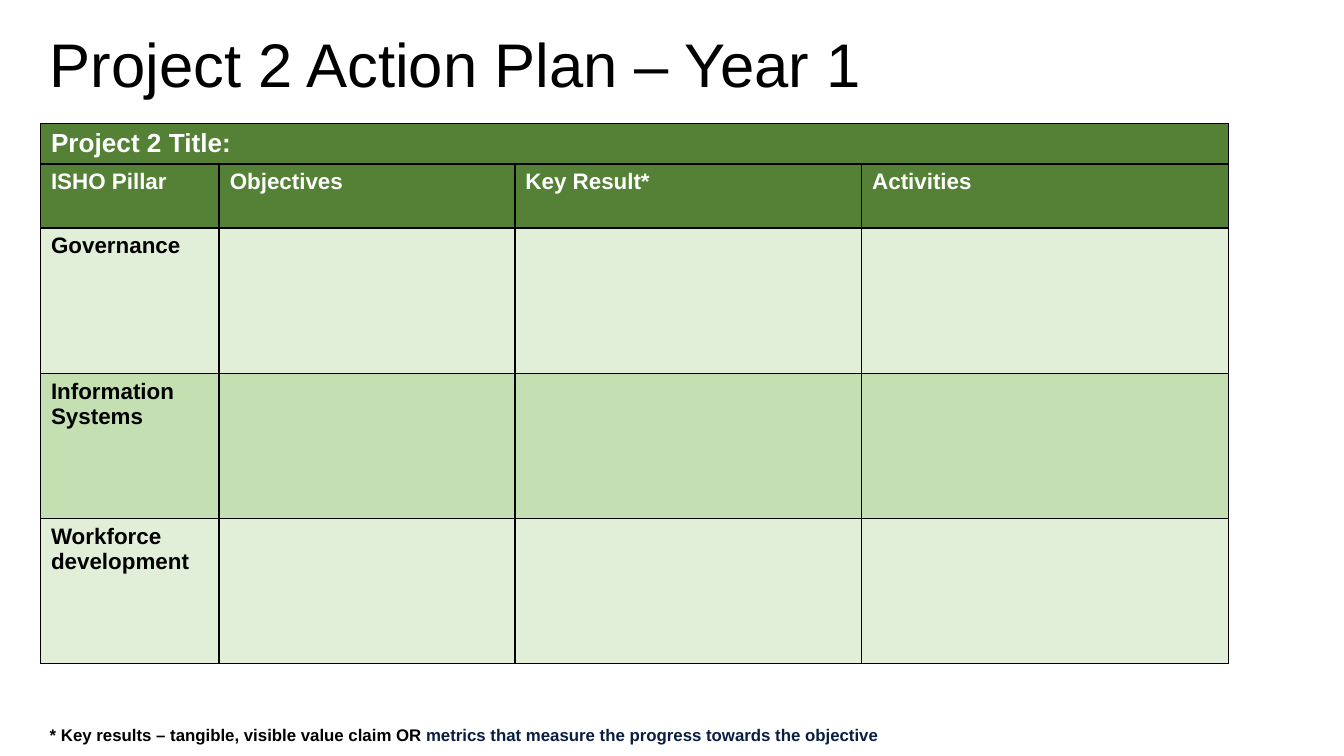
from lxml import etree
from pptx import Presentation
from pptx.dml.color import RGBColor
from pptx.enum.text import MSO_ANCHOR, PP_ALIGN
from pptx.oxml.ns import qn
from pptx.util import Inches, Pt

# Content
TITLE = "Project 2 Action Plan – Year 1"
TABLE_TITLE = "Project 2 Title:"
HEADERS = ["ISHO Pillar", "Objectives", "Key Result*", "Activities"]
PILLARS = ["Governance", "Information Systems", "Workforce development"]
FOOTNOTE = [
    ("* Key results – tangible, visible value claim OR ", "000000"),
    ("metrics that measure the progress towards the objective", "091E42"),
]

# Layout in inches, and colours
LEFT = 0.3
TABLE_TOP = 0.92
COLS = [1.33, 2.2, 2.58, 2.73]
ROWS = [0.18, 0.48] + [1.08] * len(PILLARS)
HEAD_FILL = "548135"
BAND_FILLS = ["E1EFD8", "C4E0B2"]
FONT = "Arial"


def rgb(value):
    return RGBColor.from_string(value)


def format_run(r, size, color, bold=True):
    r.font.name = FONT
    r.font.size = Pt(size)
    r.font.bold = bold
    r.font.color.rgb = rgb(color)


def set_insets(tf, side=0.07, edge=0.04):
    tf.margin_left = tf.margin_right = Inches(side)
    tf.margin_top = tf.margin_bottom = Inches(edge)


def add_borders(cell, color="000000", width=1):
    tc_pr = cell._tc.get_or_add_tcPr()
    for i, side in enumerate(("lnL", "lnR", "lnT", "lnB")):
        ln = etree.Element(qn(f"a:{side}"), w=str(Pt(width)))
        fill = etree.SubElement(ln, qn("a:solidFill"))
        etree.SubElement(fill, qn("a:srgbClr"), val=color)
        tc_pr.insert(i, ln)


def style_cell(cell, text, size, color, fill):
    cell.fill.solid()
    cell.fill.fore_color.rgb = rgb(fill)
    set_insets(cell, side=0.08)
    add_borders(cell)
    if text:
        cell.text_frame.text = text
        format_run(cell.text_frame.paragraphs[0].runs[0], size, color)


# A 16:9 slide
prs = Presentation()
prs.slide_width = Inches(10)
prs.slide_height = prs.slide_width * 9 // 16
s = prs.slides.add_slide(prs.slide_layouts[5])

# Title
title = s.shapes.title
title.left, title.top = Inches(LEFT), Inches(-0.04)
title.width, title.height = Inches(8.62), Inches(1.09)
tf = title.text_frame
tf.text = TITLE
tf.vertical_anchor = MSO_ANCHOR.MIDDLE
set_insets(tf)
p = tf.paragraphs[0]
p.alignment = PP_ALIGN.LEFT
p.line_spacing = 0.9
format_run(p.runs[0], 33, "000000", bold=False)

# Action plan table
table = s.shapes.add_table(
    len(ROWS), len(COLS), Inches(LEFT), Inches(TABLE_TOP),
    Inches(sum(COLS)), Inches(sum(ROWS))).table
for col, width in zip(table.columns, COLS):
    col.width = Inches(width)
for row, height in zip(table.rows, ROWS):
    row.height = Inches(height)

blanks = [""] * (len(COLS) - 1)
grid = [[TABLE_TITLE] + blanks, HEADERS] + [[name] + blanks for name in PILLARS]
for i, texts in enumerate(grid):
    is_head = i < 2
    fill = HEAD_FILL if is_head else BAND_FILLS[i % 2]
    for j, text in enumerate(texts):
        style_cell(table.cell(i, j), text, 14 if i == 0 else 12,
                   "FFFFFF" if is_head else "000000", fill)
table.cell(0, 0).merge(table.cell(0, len(COLS) - 1))

# Footnote
note = s.shapes.add_textbox(Inches(LEFT), Inches(5.35), Inches(8.25), Inches(0.23))
tf = note.text_frame
tf.word_wrap = True
set_insets(tf)
for text, color in FOOTNOTE:
    r = tf.paragraphs[0].add_run()
    r.text = text
    format_run(r, 9, color)

prs.save("out.pptx")
